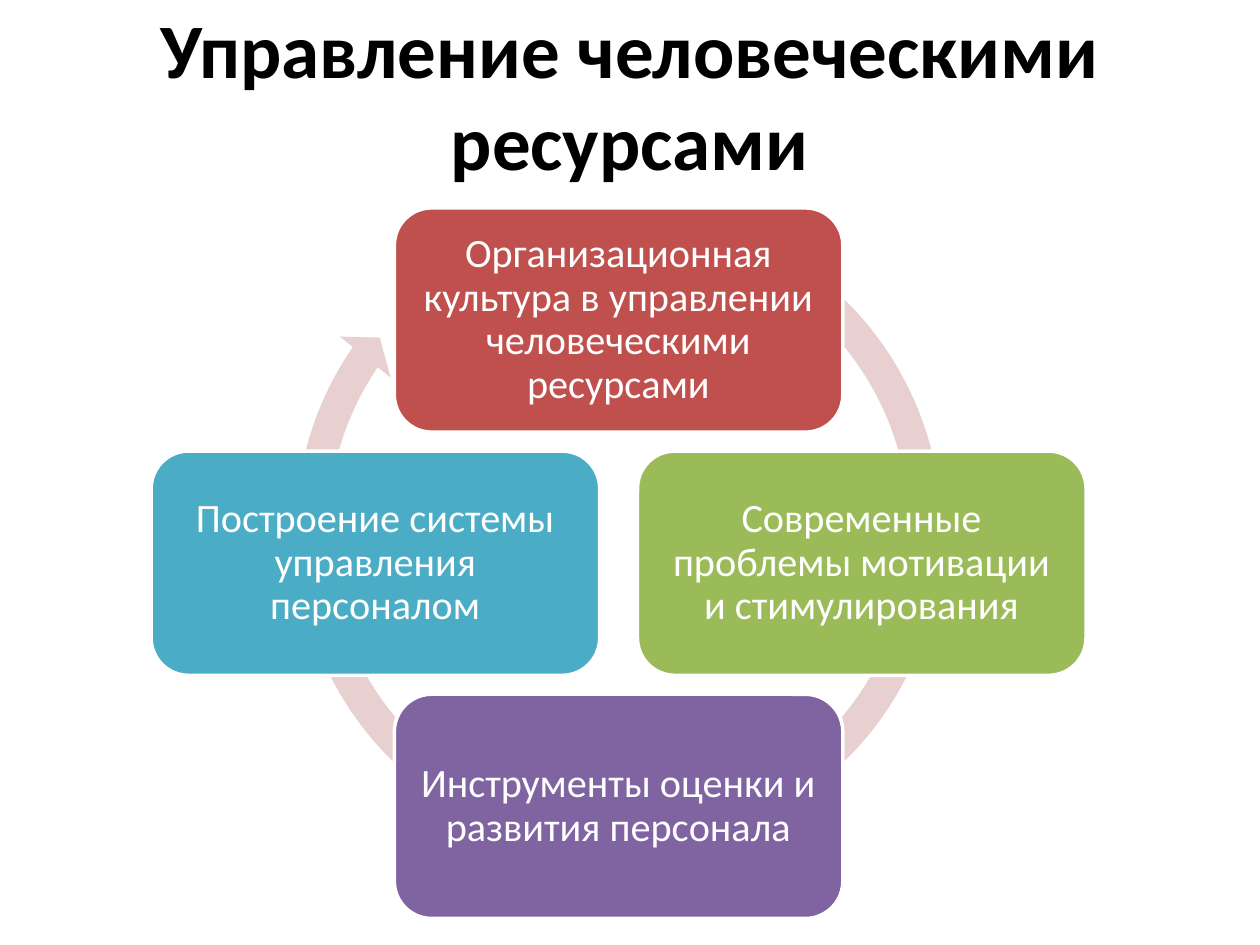
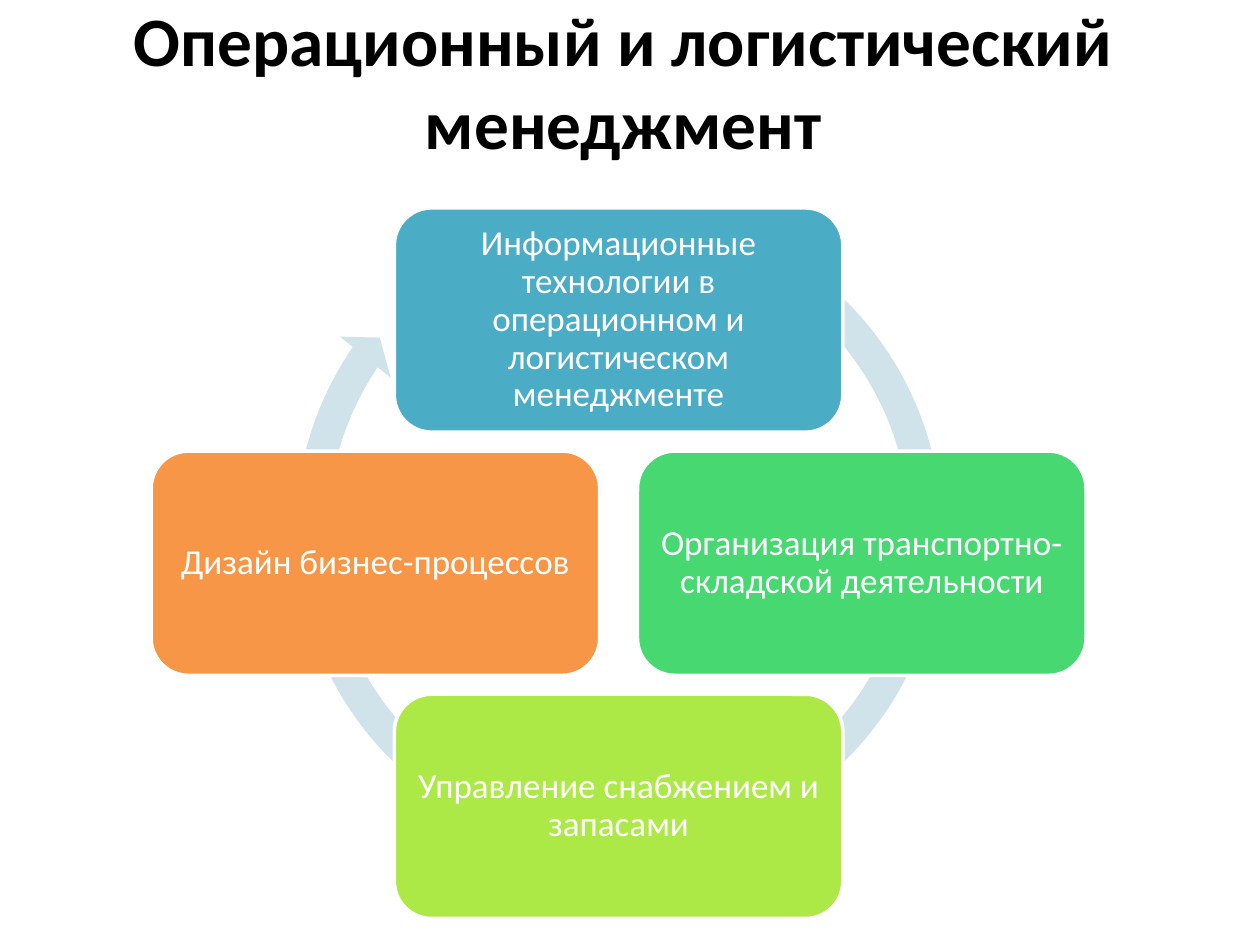
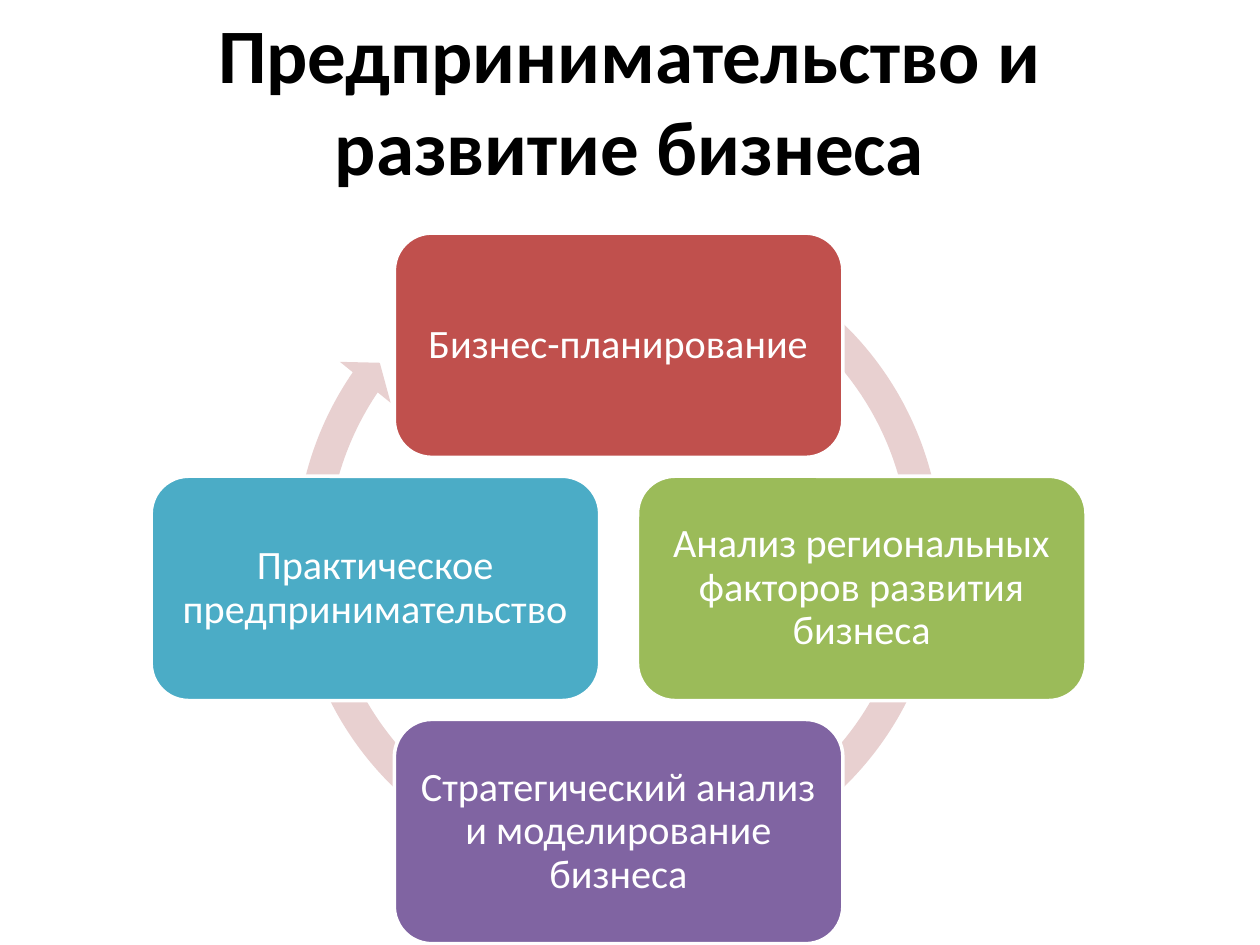
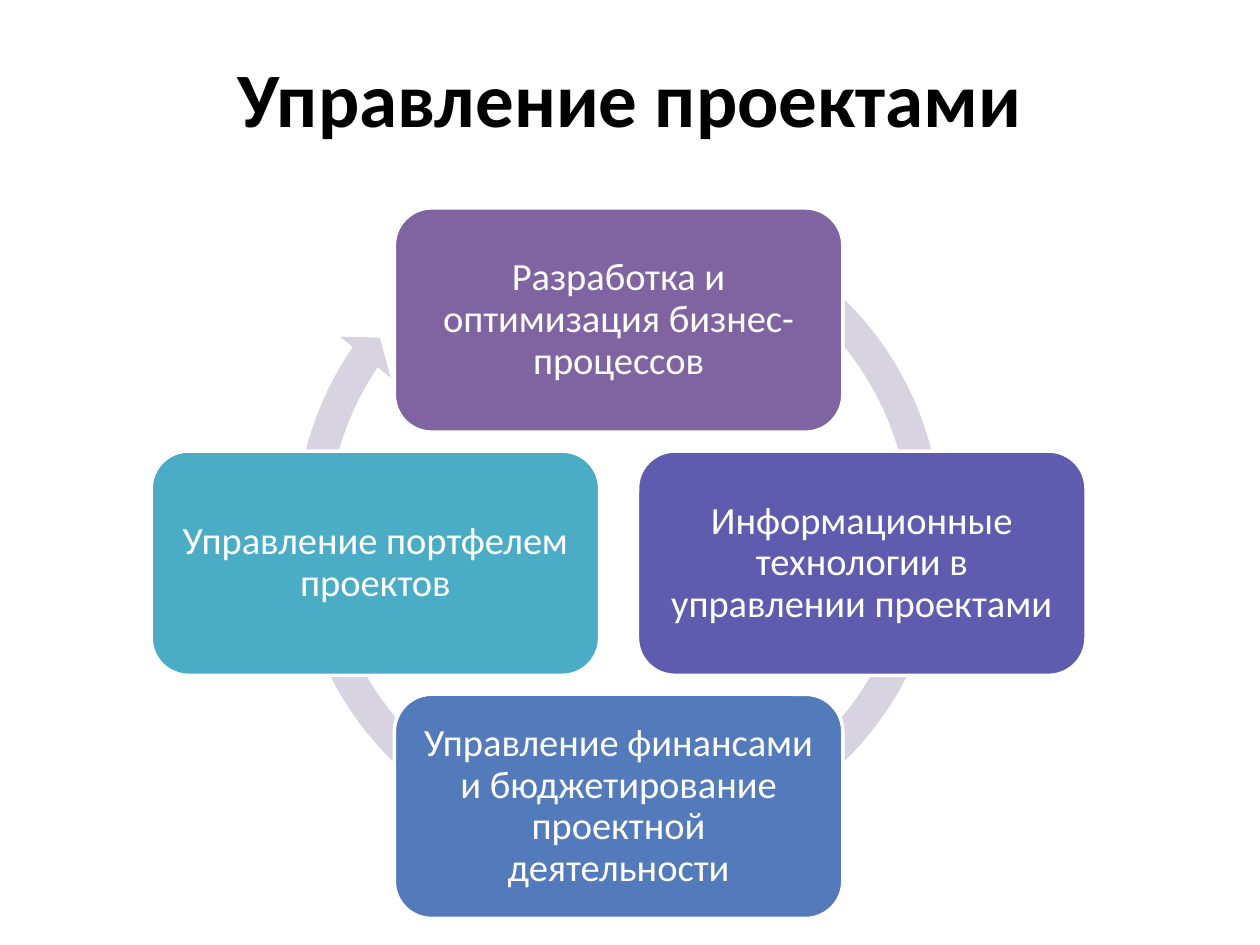
from dataclasses import dataclass

from pptx import Presentation
from pptx.dml.color import RGBColor
from pptx.enum.shapes import MSO_SHAPE
from pptx.enum.text import MSO_ANCHOR, MSO_AUTO_SIZE, PP_ALIGN
from pptx.util import Inches, Pt


@dataclass(frozen=True)
class Theme:
    font: str = "Calibri"
    black: str = "000000"
    white: str = "FFFFFF"
    red: str = "C0504D"
    olive: str = "9BBB59"
    purple: str = "8064A2"
    teal: str = "4BACC6"
    orange: str = "F79646"
    green: str = "47D872"
    lime: str = "ACE946"
    indigo: str = "5F5BAE"
    blue: str = "537ABA"
    pale_red: str = "E8D0D0"
    pale_teal: str = "D0E3EA"
    pale_purple: str = "D8D3E0"
    title_size: float = 44
    long_title_size: float = 39.6
    large_topic: float = 23
    medium_topic: float = 22
    small_topic: float = 20
    outline: float = 2


THEME = Theme()

TITLE_HEIGHT = 1.25
CENTER_X, CENTER_Y = 4.91, 4.47
CARD_WIDTH, CARD_HEIGHT = 3.56, 1.78
ORBIT = 1.93
RING_SIZE = 5.39
RING_LIFT = 0.26  # the ring's centre sits above the centre of the cards
RING_ADJUSTMENTS = (0.047, 2.729, 128.624, 180.098, 0.048)
CLOCKWISE = ((0, -1), (1, 0), (0, 1), (-1, 0))


@dataclass(frozen=True)
class Topic:
    text: str
    color: str


@dataclass(frozen=True)
class Cycle:
    title: str
    ring_color: str
    topics: tuple[Topic, ...]  # clockwise from the top
    topic_size: float = THEME.large_topic
    inset: float = 0.1
    title_left: float = 0.5
    title_top: float = 0.12
    title_width: float = 9
    title_size: float = THEME.title_size
    drop: float = 0


CYCLES = (
    Cycle(
        "Управление человеческими ресурсами",
        THEME.pale_red,
        (
            Topic("Организационная культура в управлении человеческими ресурсами", THEME.red),
            Topic("Современные проблемы мотивации и стимулирования", THEME.olive),
            Topic("Инструменты оценки и развития персонала", THEME.purple),
            Topic("Построение системы управления персоналом", THEME.teal),
        ),
    ),
    Cycle(
        "Операционный и логистический менеджмент",
        THEME.pale_teal,
        (
            Topic("Информационные технологии в операционном и логистическом менеджменте", THEME.teal),
            Topic("Организация транспортно-складской деятельности", THEME.green),
            Topic("Управление снабжением и запасами", THEME.lime),
            Topic("Дизайн бизнес-процессов", THEME.orange),
        ),
        topic_size=THEME.small_topic,
        inset=0.08,
        title_left=-0.4,
        title_top=0.01,
        title_width=10.69,
        title_size=THEME.long_title_size,
    ),
    Cycle(
        "Предпринимательство и развитие бизнеса",
        THEME.pale_red,
        (
            Topic("Бизнес-планирование", THEME.red),
            Topic("Анализ региональных факторов развития бизнеса", THEME.olive),
            Topic("Стратегический анализ и моделирование бизнеса", THEME.purple),
            Topic("Практическое предпринимательство", THEME.teal),
        ),
        title_top=0.16,
        drop=0.2,
    ),
    Cycle(
        "Управление проектами",
        THEME.pale_purple,
        (
            Topic("Разработка и оптимизация бизнес-процессов", THEME.purple),
            Topic("Информационные технологии в управлении проектами", THEME.indigo),
            Topic("Управление финансами и бюджетирование проектной деятельности", THEME.blue),
            Topic("Управление портфелем проектов", THEME.teal),
        ),
        topic_size=THEME.medium_topic,
        inset=0.09,
        title_top=0.14,
    ),
)


def write_text(shape, text: str, *, size: float, color: str, bold: bool = False,
               inset: float | None = None, line_spacing: float = 1.0) -> None:
    frame = shape.text_frame
    frame.text = text
    frame.word_wrap = True
    frame.auto_size = MSO_AUTO_SIZE.NONE
    frame.vertical_anchor = MSO_ANCHOR.MIDDLE
    if inset is not None:
        frame.margin_left = frame.margin_right = Inches(inset)
        frame.margin_top = frame.margin_bottom = Inches(inset)
    paragraph = frame.paragraphs[0]
    paragraph.alignment = PP_ALIGN.CENTER
    paragraph.line_spacing = line_spacing
    font = paragraph.runs[0].font
    font.name = THEME.font
    font.size = Pt(size)
    font.bold = bold
    font.color.rgb = RGBColor.from_string(color)


def add_centered_shape(slide, preset: MSO_SHAPE, center_x: float, center_y: float,
                       width: float, height: float, color: str):
    """Add a flat, filled shape without a line, placed by its centre."""
    shape = slide.shapes.add_shape(
        preset, Inches(center_x - width / 2), Inches(center_y - height / 2),
        Inches(width), Inches(height))
    shape.shadow.inherit = False
    shape.fill.solid()
    shape.fill.fore_color.rgb = RGBColor.from_string(color)
    shape.line.fill.background()
    return shape


def draw_title(slide, cycle: Cycle) -> None:
    title = slide.shapes.title
    title.left, title.top = Inches(cycle.title_left), Inches(cycle.title_top)
    title.width, title.height = Inches(cycle.title_width), Inches(TITLE_HEIGHT)
    write_text(title, cycle.title, size=cycle.title_size, color=THEME.black, bold=True)


def draw_ring(slide, cycle: Cycle) -> None:
    ring = add_centered_shape(
        slide, MSO_SHAPE.CIRCULAR_ARROW, CENTER_X, CENTER_Y + cycle.drop - RING_LIFT,
        RING_SIZE, RING_SIZE, cycle.ring_color)
    for index, value in enumerate(RING_ADJUSTMENTS):
        ring.adjustments[index] = value


def draw_topics(slide, cycle: Cycle) -> None:
    for topic, (across, down) in zip(cycle.topics, CLOCKWISE):
        card = add_centered_shape(
            slide, MSO_SHAPE.ROUNDED_RECTANGLE, CENTER_X + across * ORBIT,
            CENTER_Y + cycle.drop + down * ORBIT, CARD_WIDTH, CARD_HEIGHT, topic.color)
        card.line.color.rgb = RGBColor.from_string(THEME.white)
        card.line.width = Pt(THEME.outline)
        write_text(card, topic.text, size=cycle.topic_size, color=THEME.white,
                   inset=cycle.inset, line_spacing=0.9)


def main() -> None:
    presentation = Presentation()
    presentation.slide_width, presentation.slide_height = Inches(10), Inches(7.5)
    title_only = presentation.slide_layouts[5]
    for cycle in CYCLES:
        slide = presentation.slides.add_slide(title_only)
        draw_title(slide, cycle)
        draw_ring(slide, cycle)
        draw_topics(slide, cycle)
    presentation.save("out.pptx")


if __name__ == "__main__":
    main()
